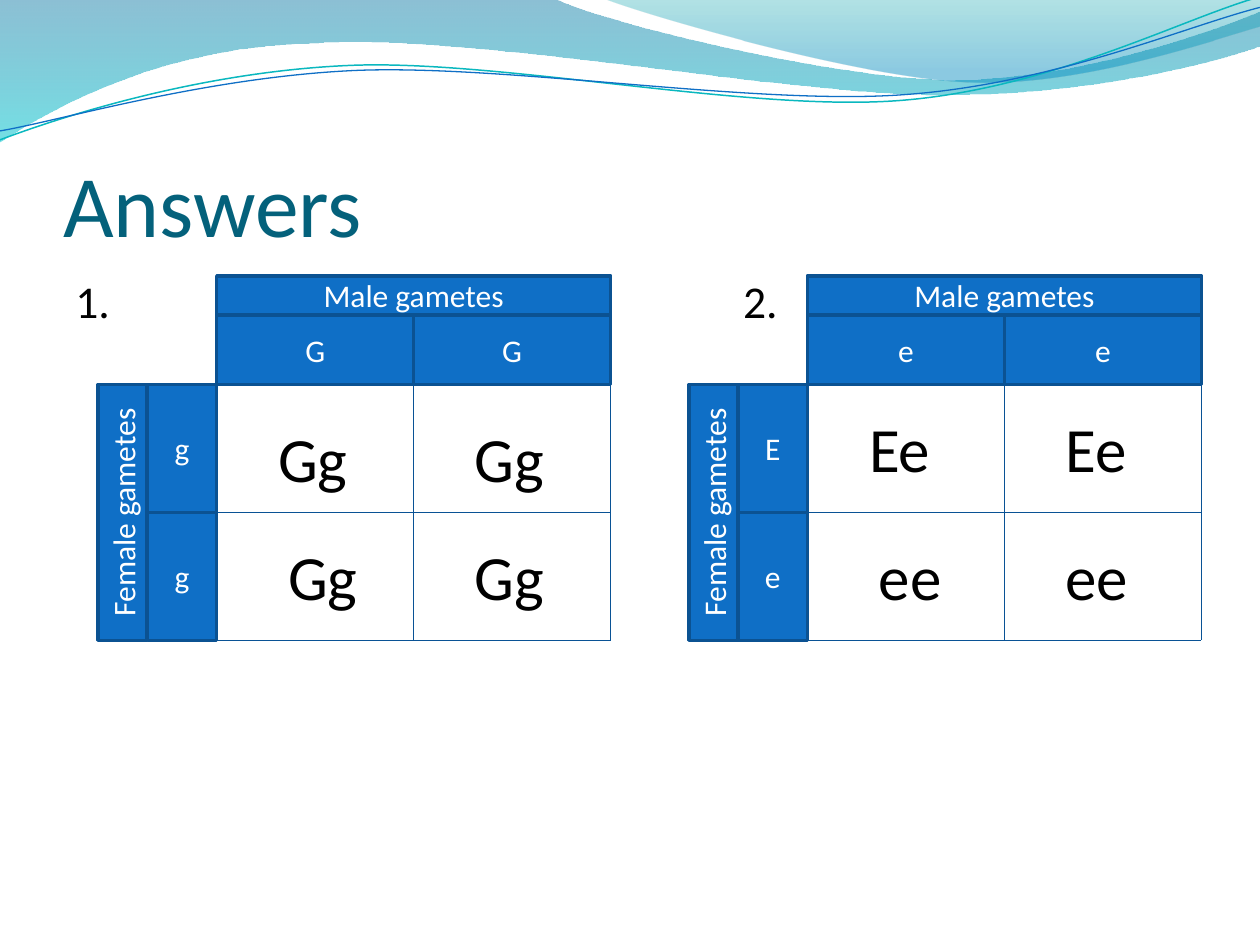
from lxml.etree import SubElement
from pptx import Presentation
from pptx.dml.color import RGBColor
from pptx.enum.shapes import MSO_CONNECTOR, MSO_SHAPE
from pptx.enum.text import MSO_ANCHOR, PP_ALIGN
from pptx.oxml.ns import qn
from pptx.util import Cm, Pt

COLORS = {
    "title": "04617B", "text": "000000", "header": "0F6FC6", "border": "0B5292",
    "grid": "095295", "header text": "FFFFFF", "teal line": "0AB8BF", "blue line": "0F6FC6",
    "band top": "0074A1", "band bottom": "00C6CF", "corner top": "00A1A9", "corner bottom": "008BBF",
}
RGB = {name: RGBColor.from_string(value) for name, value in COLORS.items()}


def add_wave(start, segments, closed):
    points = [start]
    for segment in segments:
        points += zip(segment[::2], segment[1::2])
    points = [(Cm(x), Cm(y)) for x, y in points]
    builder = slide.shapes.build_freeform(*points[0])
    builder.add_line_segments(points[1:], close=closed)
    shape = builder.convert_to_shape()
    shape.shadow.inherit = False
    steps = iter(list(shape._element.spPr.iter(qn("a:lnTo"))))
    for segment in segments:
        first = next(steps)
        if len(segment) == 6:
            first.tag = qn("a:cubicBezTo")
            for step in (next(steps), next(steps)):
                first.append(step[0])
                step.getparent().remove(step)
    return shape


def write(shape, text, size, color):
    shape.text_frame.text = text
    paragraph = shape.text_frame.paragraphs[0]
    paragraph.font.name = "Calibri"
    paragraph.font.size = Pt(size)
    paragraph.font.color.rgb = RGB[color]
    return paragraph


presentation = Presentation()
presentation.slide_width = Cm(25.4)
presentation.slide_height = Cm(19.05)
slide = presentation.slides.add_slide(presentation.slide_layouts[5])

bands = [
    ((0, 0), [(11.18, -0.03), (12.09, 0.43, 16.87, 1.6, 19.25, 1.6),
              (21.67, 1.6, 24.33, 0.66, 25.4, 0.23), (25.43, 0.91),
              (24.97, 1.12, 22.1, 1.93, 18.95, 1.91), (15.8, 1.91, 9.7, 0.71, 6.53, 0.86),
              (3.28, 0.91, 1.17, 2.11, -0.03, 2.87)],
     [("band top", 0, 45), ("band bottom", 1, 55)]),
    ((12.17, -0.03), [(12.93, 0.28, 17.32, 1.57, 19.53, 1.65),
                      (21.74, 1.75, 24.41, 0.81, 25.4, 0.53), (25.4, 0)],
     [("corner top", 0, 30), ("corner bottom", 0.8, 45)]),
]
for start, segments, stops in bands:
    band = add_wave(start, segments, True)
    band.line.fill.background()
    band.fill.gradient()
    band.fill.gradient_angle = 270
    for stop, (color, position, _) in zip(band.fill.gradient_stops, stops):
        stop.color.rgb = RGB[color]
        stop.position = position
    for element, (_, _, opacity) in zip(band._element.spPr.iter(qn("a:srgbClr")), stops):
        SubElement(element, qn("a:alpha"), val=str(opacity * 1000))

wave_lines = [
    ((0, 2.82), [(1.22, 2.36, 4.01, 1.45, 7.04, 1.32), (10.03, 1.19, 15.06, 2.26, 18.11, 2.03),
                 (21.16, 1.8, 23.83, 0.38, 25.35, -0.05)], "teal line", 0.85),
    ((0, 2.64), [(1.19, 2.44, 4.17, 1.55, 7.19, 1.42), (10.24, 1.3, 15.24, 2.13, 18.21, 1.91),
                 (21.23, 1.7, 23.9, 0.53, 25.4, 0.15)], "blue line", 0.75),
]
for start, segments, color, width in wave_lines:
    wave_line = add_wave(start, segments, False)
    wave_line.fill.background()
    wave_line.line.color.rgb = RGB[color]
    wave_line.line.width = Pt(width)

title = slide.shapes.title
title.left, title.top, title.width, title.height = Cm(1.27), Cm(1.96), Cm(22.86), Cm(3.18)
write(title, "Answers", 50, "title").alignment = PP_ALIGN.LEFT
title.text_frame.vertical_anchor = MSO_ANCHOR.BOTTOM
title.text_frame.margin_left = title.text_frame.margin_right = title.text_frame.margin_bottom = 0

numbers = slide.shapes.add_textbox(Cm(1.27), Cm(5.38), Cm(22.86), Cm(12.19))
numbers.text_frame.word_wrap = True
paragraph = write(numbers, "1.\t2.", 26, "text")
tab_stops = SubElement(paragraph._p.get_or_add_pPr(), qn("a:tabLst"))
paragraph._p.pPr.insert(0, tab_stops)
SubElement(tab_stops, qn("a:tab"), pos=str(Cm(13.46)), algn="l")

TOP, BANNER, SIDE, ALLELE, COLUMN, ROW = 5.56, 0.79, 0.99, 1.4, 3.97, 2.58
GRID_TOP = TOP + BANNER + ALLELE
GRID_BOTTOM = GRID_TOP + 2 * ROW
squares = [
    (1.98, "GG", "gg", ["Gg", "Gg", "Gg", "Gg"], 8.33),
    (13.89, "ee", "Ee", ["Ee", "Ee", "ee", "ee"], 8.13),
]
for left, male, female, offspring, first_row_top in squares:
    grid_left = left + SIDE + ALLELE
    grid_right = grid_left + 2 * COLUMN
    headers = [("Male gametes", grid_left, TOP, 2 * COLUMN, BANNER)]
    for index, allele in enumerate(male):
        headers.append((allele, grid_left + index * COLUMN, TOP + BANNER, COLUMN, ALLELE))
    for index, allele in enumerate(female):
        headers.append((allele, left + SIDE, GRID_TOP + index * ROW, ALLELE, ROW))
    headers.append(("Female gametes", left, GRID_TOP, SIDE, 2 * ROW))
    for text, x, y, width, height in headers:
        header = slide.shapes.add_shape(MSO_SHAPE.RECTANGLE, Cm(x), Cm(y), Cm(width), Cm(height))
        header.shadow.inherit = False
        header.fill.solid()
        header.fill.fore_color.rgb = RGB["header"]
        header.line.color.rgb = RGB["border"]
        header.line.width = Pt(2)
        header.text_frame.vertical_anchor = MSO_ANCHOR.MIDDLE
        write(header, text, 18, "header text").alignment = PP_ALIGN.CENTER
        if text == "Female gametes":
            header.text_frame._txBody.bodyPr.set("vert", "vert270")

    grid_lines = []
    for index in (1, 2):
        x, y = grid_left + index * COLUMN, GRID_TOP + index * ROW
        grid_lines += [(x, GRID_TOP, x, GRID_BOTTOM), (grid_left, y, grid_right, y)]
    for ends in grid_lines:
        grid_line = slide.shapes.add_connector(MSO_CONNECTOR.STRAIGHT, *map(Cm, ends))
        grid_line.line.color.rgb = RGB["grid"]
        grid_line.line.width = Pt(0.75)
        SubElement(grid_line._element.spPr, qn("a:effectLst"))

    places = [(3.38, first_row_top), (7.34, first_row_top), (3.58, 10.72), (7.34, 10.72)]
    for genotype, (offset, top) in zip(offspring, places):
        label = slide.shapes.add_textbox(Cm(left + offset), Cm(top), Cm(1.98), Cm(1.8))
        label.text_frame.word_wrap = True
        write(label, genotype, 36, "text")

presentation.save("out.pptx")
